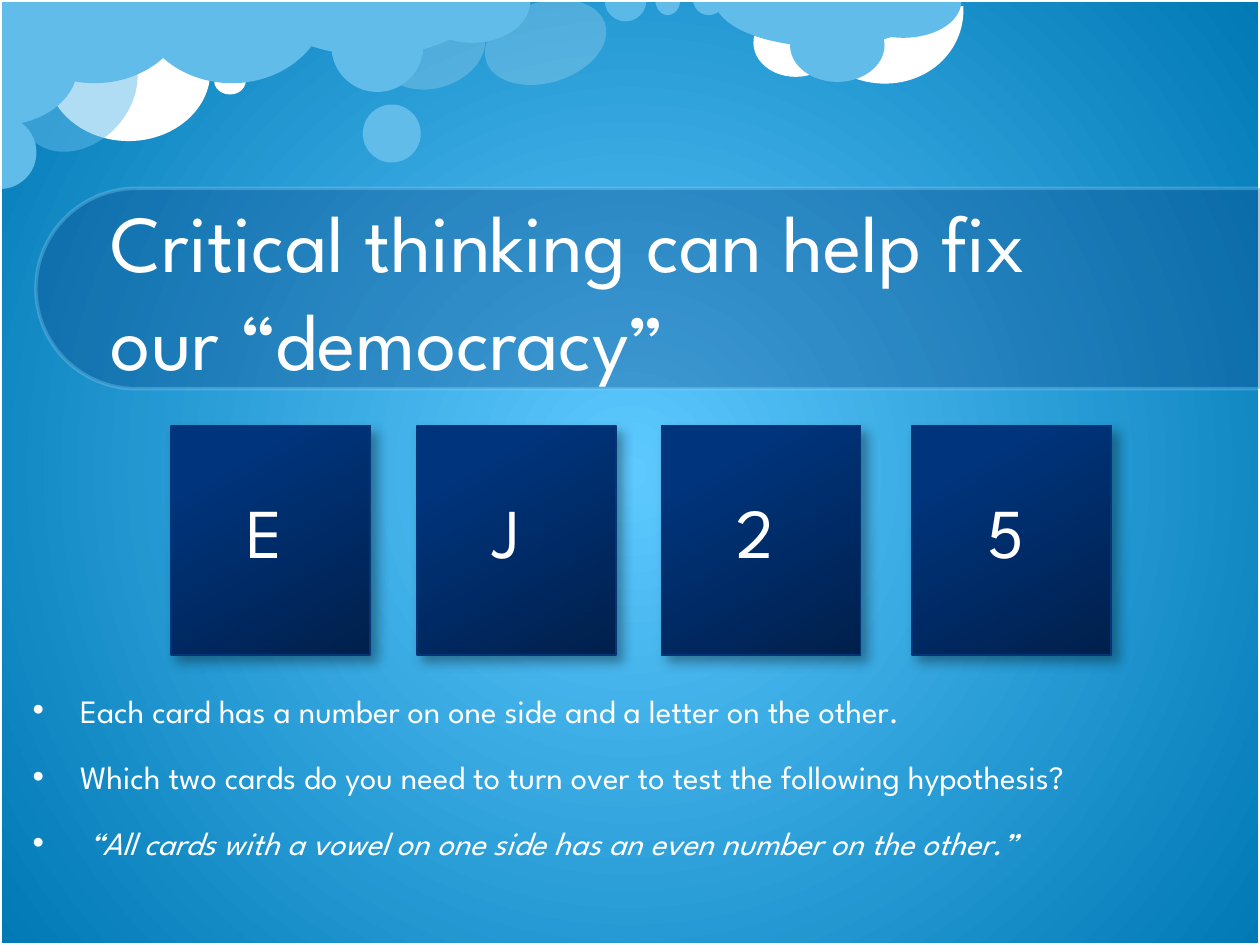
from lxml import etree
from pptx import Presentation
from pptx.dml.color import RGBColor
from pptx.enum.shapes import MSO_SHAPE
from pptx.enum.text import MSO_ANCHOR, MSO_AUTO_SIZE, PP_ALIGN
from pptx.oxml import parse_xml
from pptx.oxml.ns import nsdecls, qn
from pptx.util import Inches, Pt

ELLIPSE, PIE, ARC = MSO_SHAPE.OVAL, MSO_SHAPE.PIE, MSO_SHAPE.ARC
RECT, ROUND_TOP = MSO_SHAPE.RECTANGLE, MSO_SHAPE.ROUND_2_SAME_RECTANGLE
MIDDLE, TOP = MSO_ANCHOR.MIDDLE, MSO_ANCHOR.TOP
NO_FIT, GROW = MSO_AUTO_SIZE.NONE, MSO_AUTO_SIZE.SHAPE_TO_FIT_TEXT
LEFT = PP_ALIGN.LEFT
FONT = "League Spartan"
COLORS = {
    "white": "FFFFFF", "sky": "5DC9FF", "sea": "0079B5", "cloud": "62BCE9",
    "pale": "8FD9FB", "banner": "073779", "card_dark": "00204C",
    "card": "00347C", "card_line": "043579", "shadow": "000000",
}
HALF = (0, 108)
CLOUDS = [
    (ELLIPSE, (3.11, -0.05, 0.64, 0.86), "white", 20, 72.8, ()),
    (ELLIPSE, (0.37, 0.01, 1.3, 1.11), "white", 100, 0, ()),
    (ARC, (6.39, -0.6, 1.21, 1.31), "white", 100, 106.5, (151.8, 44.48)),
    (ELLIPSE, (5.98, 0.07, 0.67, 0.54), "white", 100, 0, ()),
    (PIE, (-0.01, -0.66, 1.52, 1.32), "cloud", 100, 0, HALF),
    (PIE, (2.08, -0.44, 1.75, 0.88), "cloud", 100, 0, HALF),
    (ELLIPSE, (2.88, 0.83, 0.46, 0.46), "cloud", 100, 0, ()),
    (ELLIPSE, (0.19, 0.18, 0.85, 1.07), "cloud", 50, 41.8, ()),
    (PIE, (-0.29, 0.92, 0.58, 0.58), "cloud", 100, 270, HALF),
    (ELLIPSE, (1.7, 0.54, 0.25, 0.21), "white", 100, 0, ()),
    (PIE, (1.08, -0.66, 1.52, 1.32), "cloud", 100, 0, HALF),
    (PIE, (5.67, -0.38, 1.75, 0.75), "cloud", 100, 0, HALF),
    (ELLIPSE, (6.27, 0.07, 0.75, 0.58), "cloud", 100, 0, ()),
    (PIE, (6.71, -0.28, 0.92, 0.58), "cloud", 100, 0, HALF),
    (ELLIPSE, (4.01, -0.16, 0.64, 0.99), "white", 20, 72.8, ()),
    (PIE, (4.8, -0.16, 0.33, 0.33), "pale", 50, 0, HALF),
    (PIE, (5.2, -0.13, 0.2, 0.25), "cloud", 100, 0, HALF),
    (PIE, (5.5, -0.13, 0.25, 0.25), "cloud", 100, 0, HALF),
    (ELLIPSE, (2.63, 0, 0.73, 0.73), "cloud", 100, 0, ()),
    (PIE, (3.29, -0.33, 0.92, 0.67), "cloud", 100, 0, HALF),
    (PIE, (-0.47, -0.09, 0.93, 1.24), "cloud", 100, 270, HALF),
]
CARDS = [("E", 1.36), ("J", 3.31), ("2", 5.25), ("5", 7.24)]
TITLE = "Critical thinking can help fix our “democracy”"
BULLETS = [
    "Each card has a number on one side and a letter on the other.",
    "Which two cards do you need to turn over to test the following hypothesis?",
    " “All cards with a vowel on one side has an even number on the other.”",
]


def rgb(name):
    """Return the named palette colour."""
    return RGBColor.from_string(COLORS[name])


def set_alpha(parent, percent):
    """Make the solid colour inside parent partly transparent."""
    color = next(parent.iter(qn("a:srgbClr")))
    etree.SubElement(color, qn("a:alpha")).set("val", str(percent * 1000))


def add_shape(s, kind, box, fill=None, alpha=100, rotation=0, adj=()):
    """Add a preset shape with a flat fill, no line and no shadow."""
    sp = s.shapes.add_shape(kind, *(Inches(v) for v in box))
    sp.shadow.inherit = False
    sp.rotation = rotation
    for i, value in enumerate(adj):
        sp.adjustments[i] = value
    sp.line.fill.background()
    if fill is None:
        sp.fill.background()
    else:
        sp.fill.solid()
        sp.fill.fore_color.rgb = rgb(fill)
        if alpha < 100:
            set_alpha(sp.element.spPr, alpha)
    return sp


def set_line(sp, color, width):
    """Give a shape a solid outline."""
    sp.line.color.rgb = rgb(color)
    sp.line.width = Pt(width)


def style_runs(p, size):
    """Format every run of a paragraph."""
    for r in p.runs:
        r.font.name = FONT
        r.font.size = Pt(size)
        r.font.color.rgb = rgb("white")


def place(sp, box):
    """Move a placeholder to a box, in front of what is drawn so far."""
    sp.left, sp.top, sp.width, sp.height = (Inches(v) for v in box)
    sp.element.getparent().append(sp.element)


def add_background(s):
    """Fill the slide with a radial blue gradient."""
    s.element.cSld.insert(0, parse_xml(
        f'<p:bg {nsdecls("p", "a")}><p:bgPr><a:gradFill rotWithShape="1"><a:gsLst>'
        f'<a:gs pos="0"><a:srgbClr val="{COLORS["sky"]}"/></a:gs>'
        f'<a:gs pos="100000"><a:srgbClr val="{COLORS["sea"]}"/></a:gs></a:gsLst>'
        '<a:path path="circle"><a:fillToRect l="50000" t="50000" r="50000" b="50000"/>'
        '</a:path></a:gradFill><a:effectLst/></p:bgPr></p:bg>'))


def add_title(s, box):
    """Place the title on its rounded banner, which runs to the right edge."""
    banner = add_shape(s, ROUND_TOP, (4.35, -2.57, 1.59, 9.72), "banner", 30, 270, (0.5, 0))
    set_line(banner, "pale", 2)
    set_alpha(banner.element.spPr.find(qn("a:ln")), 30)
    title = s.shapes.title
    place(title, box)
    tf = title.text_frame
    tf.text = TITLE
    tf.auto_size = NO_FIT
    tf.vertical_anchor = MIDDLE
    p = tf.paragraphs[0]
    p.alignment = LEFT
    p.line_spacing = Pt(56)
    style_runs(p, 46)


def add_card(s, box, letter):
    """Draw one shaded card with its letter."""
    x, y, _, _ = box
    card = add_shape(s, RECT, box)
    card.fill.gradient()
    card.fill.gradient_angle = 120
    stops = zip(card.fill.gradient_stops, ("card_dark", "card"), (0, 0.8))
    for stop, color, position in stops:
        stop.color.rgb = rgb(color)
        stop.position = position
    set_line(card, "card_line", 1)
    effects = card.element.spPr.find(qn("a:effectLst"))
    effects.append(parse_xml(
        f'<a:outerShdw {nsdecls("a")} blurRad="{Pt(7)}" dist="{Pt(5)}" dir="3000000" '
        f'rotWithShape="0"><a:srgbClr val="{COLORS["shadow"]}"><a:alpha val="35000"/>'
        '</a:srgbClr></a:outerShdw>'))
    label = s.shapes.add_textbox(Inches(x + 0.5), Inches(y + 0.45), Inches(0.9), Inches(0.77))
    tf = label.text_frame
    tf.word_wrap = True
    tf.auto_size = GROW
    tf.text = letter
    style_runs(tf.paragraphs[0], 40)


def add_bullets(s, box):
    """Place the bulleted question, with the hypothesis in italics."""
    body = s.placeholders[1]
    place(body, box)
    tf = body.text_frame
    tf.text = "\n".join(BULLETS)
    tf.auto_size = NO_FIT
    tf.vertical_anchor = TOP
    for p in tf.paragraphs:
        p.line_spacing = 0.8
        p.space_before = Pt(0)
        p.space_after = Pt(20)
        style_runs(p, 18.6)
    tf.paragraphs[-1].runs[0].font.italic = True


def main():
    """Build the slide and save it."""
    prs = Presentation()
    prs.slide_width, prs.slide_height = Inches(10), Inches(7.5)
    s = prs.slides.add_slide(prs.slide_layouts[1])
    add_background(s)
    for cloud in CLOUDS:
        add_shape(s, *cloud)
    set_line(add_shape(s, RECT, (0, 0, 10, 7.5)), "white", 2)
    add_title(s, (0.78, 1.5, 8.44, 1.58))
    for letter, x in CARDS:
        add_card(s, (x, 3.38, 1.58, 1.82), letter)
    add_bullets(s, (0.16, 5.49, 9.64, 2.01))
    prs.save("out.pptx")


if __name__ == "__main__":
    main()
